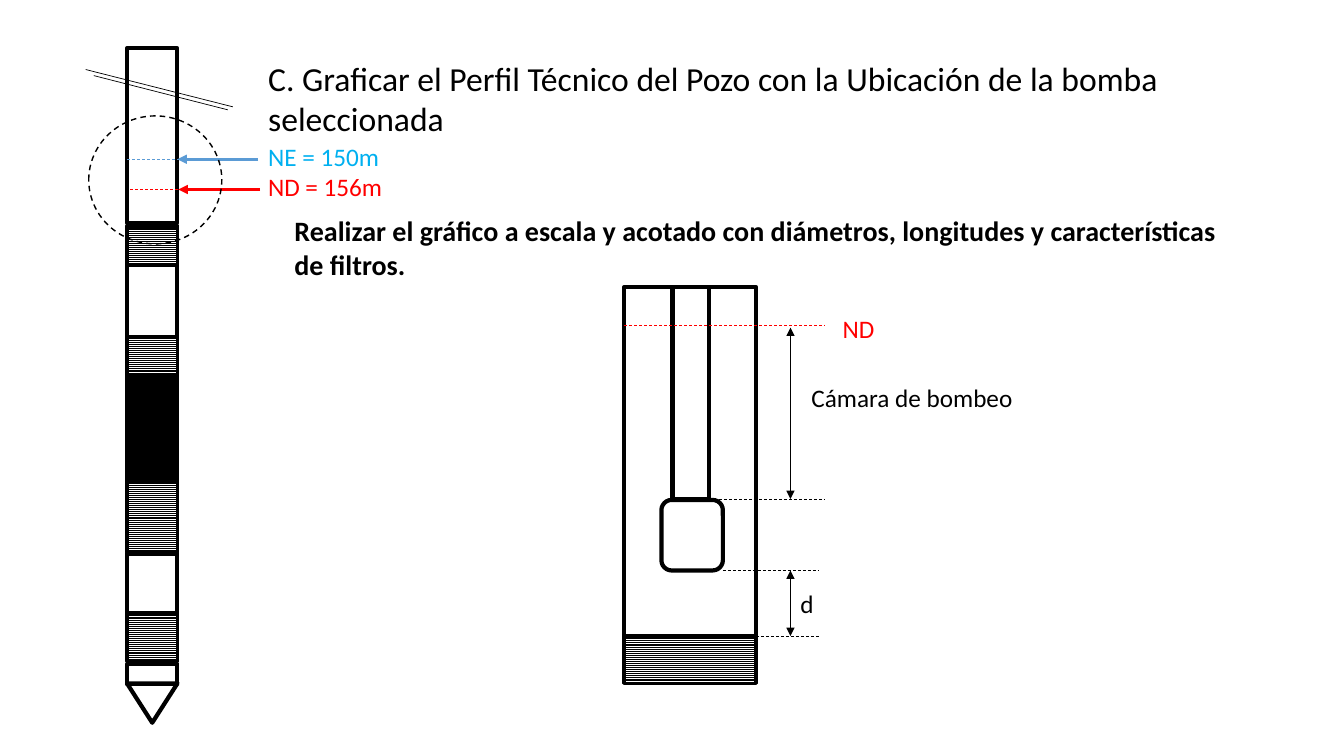
"""Build the slide with the technical profile of a well and its pump chamber."""
from lxml import etree
from pptx import Presentation
from pptx import util as u
from pptx.dml import color
from pptx.enum import dml, shapes, text
from pptx.oxml import ns

COLORS = {
    "black": "000000",
    "white": "FFFFFF",
    "red": "FF0000",
    "sky": "00B0F0",
    "blue": "5B9BD5",
}
RGB = {name: color.RGBColor.from_string(value) for name, value in COLORS.items()}
LIGHT = dml.MSO_PATTERN.LIGHT_HORIZONTAL
DARK = dml.MSO_PATTERN.DARK_HORIZONTAL
NARROW = dml.MSO_PATTERN.NARROW_HORIZONTAL
KINDS = shapes.MSO_SHAPE

presentation = Presentation()
presentation.slide_width = u.Inches(13.33)
presentation.slide_height = u.Inches(7.5)
cell = presentation.slide_height / 75
slide = presentation.slides.add_slide(presentation.slide_layouts[1])


def add_box(kind, left, top, width, height, weight=3, pattern=None):
    """Draw an outlined shape, hatched if a pattern is given; lengths are in cells."""
    shape = slide.shapes.add_shape(
        kind, *(round(length * cell) for length in (left, top, width, height)))
    shape.shadow.inherit = False
    shape.line.color.rgb = RGB["black"]
    shape.line.width = u.Pt(weight)
    if pattern is None:
        shape.fill.background()
    else:
        shape.fill.patterned()
        shape.fill.pattern = pattern
        shape.fill.fore_color.rgb = RGB["black"]
        shape.fill.back_color.rgb = RGB["white"]
    return shape


def add_line(start, end, hue="black", weight=0.5, dashed=False, arrows=()):
    """Draw a straight line between two grid points; lengths are in cells."""
    line = slide.shapes.add_connector(
        shapes.MSO_CONNECTOR.STRAIGHT,
        *(round(length * cell) for length in (*start, *end)))
    line.line.color.rgb = RGB[hue]
    line.line.width = u.Pt(weight)
    if dashed:
        line.line.dash_style = dml.MSO_LINE.DASH
    outline = line.line._get_or_add_ln()
    for arrow in arrows:
        etree.SubElement(outline, ns.qn(f"a:{arrow}"), type="triangle")
    etree.SubElement(line._element.spPr, ns.qn("a:effectLst"))


well_left, well_width = 12.6, 5
well_sections = [
    (4.8, 17.3, 3, None),
    (26.3, 7.1, 3, None),
    (22.4, 3.9, 2.5, LIGHT),
    (37.3, 10.6, 2.25, DARK),
    (54.9, 5.9, 3, None),
    (33.4, 3.9, 2.5, LIGHT),
    (47.8, 7, 2.5, NARROW),
    (60.8, 4.8, 2.5, NARROW),
    (65.9, 2, 3, None),
]
for top, height, weight, pattern in well_sections:
    add_box(KINDS.RECTANGLE, well_left, top, well_width, height, weight, pattern)
well_tip = add_box(KINDS.ISOSCELES_TRIANGLE, well_left, 67.8, well_width, 3.9)
well_tip.rotation = 180

add_line((8.5, 6.9), (23.1, 10.6))
add_line((9.3, 7.5), (22.6, 10.9))

for level, hue, arrow_start, arrow_end, dash_start in [
    (15.8, "blue", 25.6, 17.6, 12.6),
    (18.8, "red", 25.8, 17.7, 12.9),
]:
    add_line((arrow_start, level), (arrow_end, level), hue, 2.25, arrows=["tailEnd"])
    add_line((dash_start, level), (dash_start + 5.1, level), hue, dashed=True)

detail_circle = add_box(KINDS.OVAL, 8.8, 11.5, 13.2, 12.7, 1)
detail_circle.line.dash_style = dml.MSO_LINE.DASH

chamber_left, chamber_width = 61.9, 13.1
dynamic_level, pump_top, pump_bottom, filter_top = 32.3, 49.5, 56.6, 63.1
add_box(KINDS.RECTANGLE, chamber_left, 28.5, chamber_width, 34.6)
add_box(KINDS.RECTANGLE, chamber_left, filter_top, chamber_width, 4.7, 2.5, LIGHT)
add_box(KINDS.RECTANGLE, 66.7, 28.5, 3.6, 21)
add_box(KINDS.ROUNDED_RECTANGLE, 65.6, 49.6, 6.1, 7)

for start, end, level, hue in [
    (chamber_left, 81.8, dynamic_level, "red"),
    (70.3, 81.8, pump_top, "black"),
    (71.7, 81.2, pump_bottom, "black"),
    (72, 81.2, filter_top, "black"),
]:
    add_line((start, level), (end, level), hue, dashed=True)
for top, bottom in [(32.5, pump_top), (pump_bottom, filter_top)]:
    add_line((78.4, top), (78.4, bottom), arrows=["headEnd", "tailEnd"])

title, body = slide.placeholders
labels = [
    (title, (25.6, 5.2, 94.8, 9.1), 24, False, True,
     [("C. Graficar el Perfil Técnico del Pozo con la Ubicación de la bomba seleccionada",
       "black")]),
    (body, (28.2, 20.7, 93.6, 7.7), 20, True, True,
     [("Realizar el gráfico a escala y acotado con diámetros, longitudes y "
       "características de filtros.", "black")]),
    (None, (25.6, 13.5, 13.5, 7), 18, False, False,
     [("NE = 150m", "sky"), ("ND = 156m", "red")]),
    (None, (78.4, 57.9, 3.4, 4), 18, False, False, [("d", "black")]),
    (None, (79.5, 37.4, 22.2, 4), 18, False, False, [("Cámara de bombeo", "black")]),
    (None, (82.6, 30.6, 5.2, 4), 18, False, False, [("ND", "red")]),
]
for shape, area, size, bold, wrap, lines in labels:
    shape = shape or slide.shapes.add_textbox(0, 0, 0, 0)
    for name, length in zip(("left", "top", "width", "height"), area):
        setattr(shape, name, round(length * cell))
    frame = shape.text_frame
    frame_format = {
        "word_wrap": wrap,
        "auto_size": text.MSO_AUTO_SIZE.NONE,
        "vertical_anchor": text.MSO_ANCHOR.TOP,
    }
    for name, value in frame_format.items():
        setattr(frame, name, value)
    frame.text = "\n".join(words for words, hue in lines)
    for paragraph, (words, hue) in zip(frame.paragraphs, lines):
        paragraph.alignment = text.PP_ALIGN.LEFT
        paragraph.space_before = u.Pt(0)
        font = paragraph.runs[0].font
        font_format = {"name": "Calibri", "size": u.Pt(size), "bold": bold}
        for name, value in font_format.items():
            setattr(font, name, value)
        font.color.rgb = RGB[hue]

body_properties = body.text_frame.paragraphs[0]._p.get_or_add_pPr()
for name in ("marL", "indent"):
    body_properties.set(name, "0")
etree.SubElement(body_properties, ns.qn("a:buNone"))

presentation.save("out.pptx")
